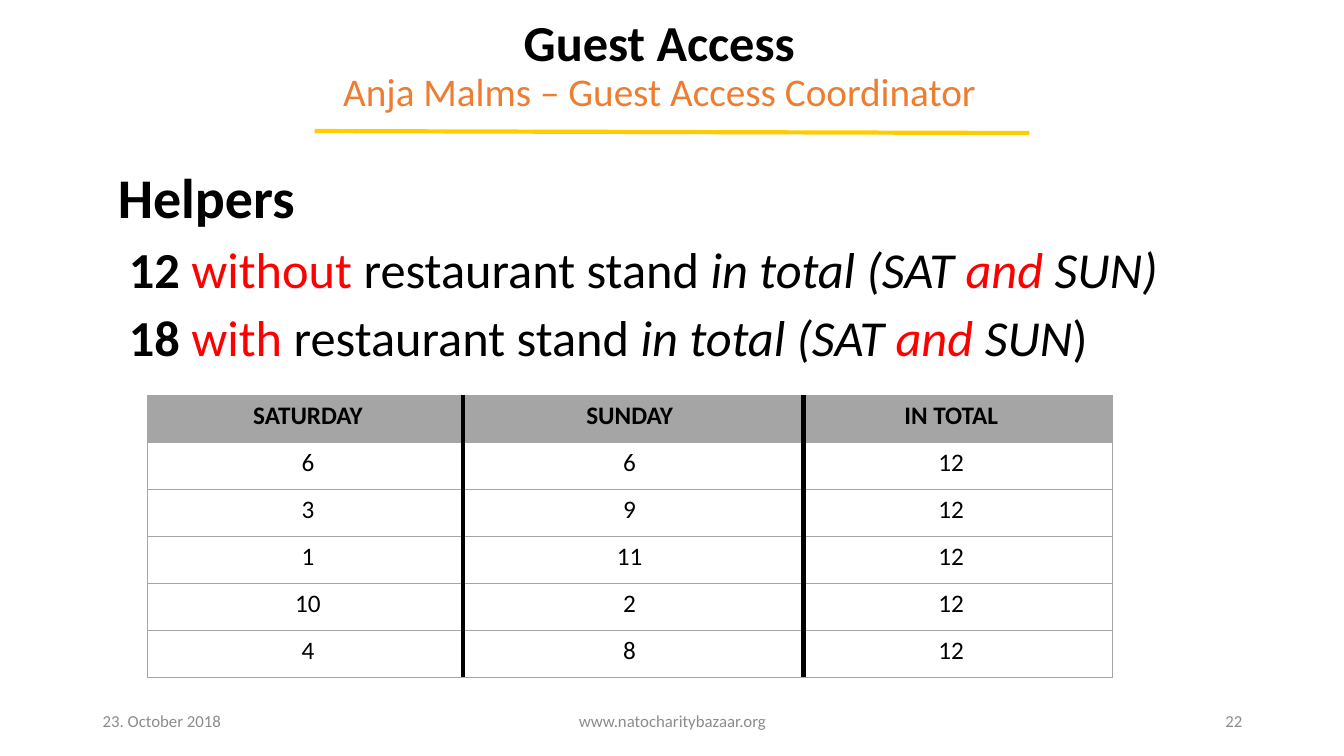
from lxml.etree import SubElement
from pptx import Presentation
from pptx.dml.color import RGBColor
from pptx.enum.shapes import MSO_CONNECTOR
from pptx.enum.text import MSO_ANCHOR, PP_ALIGN
from pptx.oxml.ns import qn
from pptx.util import Inches, Pt

BLACK = RGBColor(0x00, 0x00, 0x00)
WHITE = RGBColor(0xFF, 0xFF, 0xFF)
RED = RGBColor(0xFF, 0x00, 0x00)
ORANGE = RGBColor(0xED, 0x7D, 0x31)
YELLOW = RGBColor(0xFF, 0xCC, 0x00)
GRAY = RGBColor(0xA5, 0xA5, 0xA5)
FOOTER_GRAY = RGBColor(0x8C, 0x8C, 0x8C)


def add_text(paragraph, text, size, color=BLACK, bold=False, italic=False):
    run = paragraph.add_run()
    run.text = text
    run.font.name = "Calibri"
    run.font.size = Pt(size)
    run.font.bold = bold
    run.font.italic = italic
    run.font.color.rgb = color


def set_borders(cell, sides):
    """Draw thin gray borders on the given sides and none on the others."""
    properties = cell._tc.get_or_add_tcPr()
    for side in "LRTB":
        line = SubElement(properties, qn(f"a:ln{side}"), w=str(Pt(0.5)))
        if side in sides:
            fill = SubElement(line, qn("a:solidFill"))
            SubElement(fill, qn("a:srgbClr"), val=str(GRAY))
        else:
            SubElement(line, qn("a:noFill"))


presentation = Presentation()
presentation.slide_width = Inches(13.33)
presentation.slide_height = Inches(7.5)
slide = presentation.slides.add_slide(presentation.slide_layouts[5])

# Title
title = slide.shapes.title
title.left, title.top = Inches(1.54), Inches(0.24)
title.width, title.height = Inches(10), Inches(0.95)
title.text_frame.vertical_anchor = MSO_ANCHOR.BOTTOM
paragraph = title.text_frame.paragraphs[0]
paragraph.alignment = PP_ALIGN.CENTER
paragraph.line_spacing = 0.9
add_text(paragraph, "Guest Access", 36, bold=True)
paragraph.add_line_break()
add_text(paragraph, "Anja Malms – Guest Access Coordinator", 28, ORANGE)

# Helper summary
helpers = slide.shapes.add_textbox(Inches(1.07), Inches(1.64), Inches(11.54), Inches(2.2))
frame = helpers.text_frame
frame.word_wrap = True
paragraph = frame.paragraphs[0]
paragraph.line_spacing = 0.9
add_text(paragraph, "Helpers", 40, bold=True)
for count, kind, closing_italic in [("12", "without", True), ("18", "with", False)]:
    paragraph = frame.add_paragraph()
    paragraph.line_spacing = 0.9
    paragraph.space_before = Pt(10)
    paragraph._p.get_or_add_pPr().set("marL", str(Inches(0.11)))
    add_text(paragraph, f"{count} ", 36, bold=True)
    add_text(paragraph, kind, 36, RED)
    add_text(paragraph, " restaurant stand ", 36)
    add_text(paragraph, "in total (SAT ", 36, italic=True)
    add_text(paragraph, "and", 36, RED, italic=True)
    add_text(paragraph, " SUN", 36, italic=True)
    add_text(paragraph, ")", 36, italic=closing_italic)

# Shift table
shifts = [
    ("SATURDAY", "SUNDAY", "IN TOTAL"),
    (6, 6, 12),
    (3, 9, 12),
    (1, 11, 12),
    (10, 2, 12),
    (4, 8, 12),
]
table_top, table_height = 3.92, 2.8
table = slide.shapes.add_table(
    len(shifts), 3, Inches(1.46), Inches(table_top), Inches(9.57), Inches(table_height)
).table
table.horz_banding = False
for row_index, row in enumerate(shifts):
    is_header = row_index == 0
    for column_index, value in enumerate(row):
        cell = table.cell(row_index, column_index)
        set_borders(cell, ("LTB", "TB", "RTB")[column_index])
        cell.fill.solid()
        cell.fill.fore_color.rgb = GRAY if is_header else WHITE
        paragraph = cell.text_frame.paragraphs[0]
        paragraph.alignment = PP_ALIGN.CENTER
        add_text(paragraph, str(value), 18, bold=is_header)

# Title underline and column dividers
table_bottom = table_top + table_height
for left, top, right, bottom, color in [
    (3.12, 1.3, 10.21, 1.32, YELLOW),
    (4.59, table_top, 4.59, table_bottom, BLACK),
    (7.97, table_top, 7.97, table_bottom, BLACK),
]:
    line = slide.shapes.add_connector(
        MSO_CONNECTOR.STRAIGHT, Inches(left), Inches(top), Inches(right), Inches(bottom)
    )
    line.line.color.rgb = color
    line.line.width = Pt(3)
    SubElement(line._element.spPr, qn("a:effectLst"))

# Footer
for left, width, text, alignment in [
    (0.92, 3, "23. October 2018", PP_ALIGN.LEFT),
    (4.42, 4.5, "www.natocharitybazaar.org", PP_ALIGN.CENTER),
    (9.42, 3, "22", PP_ALIGN.RIGHT),
]:
    footer = slide.shapes.add_textbox(Inches(left), Inches(6.95), Inches(width), Inches(0.4))
    footer.text_frame.word_wrap = True
    footer.text_frame.vertical_anchor = MSO_ANCHOR.MIDDLE
    paragraph = footer.text_frame.paragraphs[0]
    paragraph.alignment = alignment
    add_text(paragraph, text, 12, FOOTER_GRAY)

presentation.save("out.pptx")
